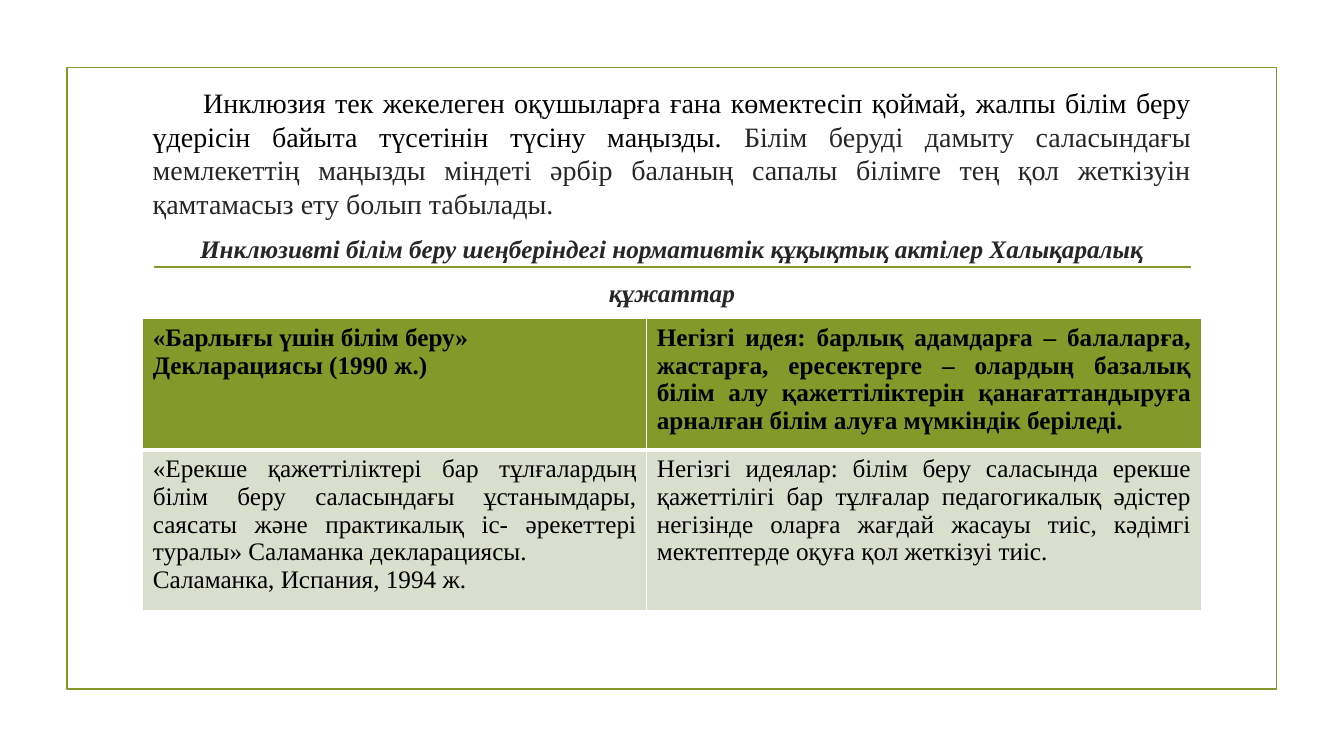
"""Builds the slide on legal acts for inclusive education."""
from lxml import etree
from pptx import Presentation
from pptx.dml.color import RGBColor
from pptx.enum.shapes import MSO_CONNECTOR, MSO_SHAPE
from pptx.enum.text import PP_ALIGN
from pptx.oxml.ns import qn
from pptx.util import Pt

LEFT, CENTER, JUSTIFY = PP_ALIGN.LEFT, PP_ALIGN.CENTER, PP_ALIGN.JUSTIFY
RECTANGLE, STRAIGHT = MSO_SHAPE.RECTANGLE, MSO_CONNECTOR.STRAIGHT
FONT = "Times New Roman"
COLORS = {"olive": "83992A", "pale": "D9DECD", "black": "000000",
          "grey": "262626", "white": "FFFFFF"}


def color(name):
    return RGBColor.from_string(COLORS[name])


def set_font(font, size, shade, bold=False, italic=False):
    font.name, font.size = FONT, Pt(size)
    font.bold, font.italic = bold, italic
    font.color.rgb = color(shade)


deck = Presentation()
deck.slide_width, deck.slide_height = Pt(960), Pt(540)
slide = deck.slides.add_slide(deck.slide_layouts[6])

frame = slide.shapes.add_shape(RECTANGLE, Pt(47.8), Pt(48.2), Pt(864), Pt(444))
frame.shadow.inherit = False
frame.fill.background()

divider = slide.shapes.add_connector(STRAIGHT, Pt(110), Pt(190.8), Pt(850.5), Pt(190.8))
etree.SubElement(divider.element.spPr, qn("a:effectLst"))
for outlined in (frame, divider):
    outlined.line.color.rgb = color("olive")
    outlined.line.width = Pt(1.25)

body = slide.shapes.add_textbox(Pt(102), Pt(57.6), Pt(756), Pt(405)).text_frame
body.word_wrap = True
intro = body.paragraphs[0]
intro.alignment = JUSTIFY
intro.space_after = Pt(6)
intro._p.get_or_add_pPr().set("indent", str(Pt(36)))
intro_parts = [
    ("Инклюзия тек жекелеген оқушыларға ғана көмектесіп қоймай, жалпы білім беру "
     "үдерісін байыта түсетінін түсіну маңызды. ", "black"),
    ("Білім беруді дамыту саласындағы мемлекеттің маңызды міндеті әрбір баланың "
     "сапалы білімге тең қол жеткізуін қамтамасыз ету болып табылады.", "grey"),
]
for text, shade in intro_parts:
    run = intro.add_run()
    run.text = text
    set_font(run.font, 20, shade)

for text in ("Инклюзивті білім беру шеңберіндегі нормативтік құқықтық актілер Халықаралық",
             "құжаттар"):
    heading = body.add_paragraph()
    heading.text = text
    heading.alignment = CENTER
    heading.space_before, heading.space_after = Pt(3.6), Pt(6)
    set_font(heading.font, 18, "grey", bold=True, italic=True)

documents = [
    [[("«Барлығы үшін білім беру» Декларациясы (1990 ж.)", LEFT)],
     [("Негізгі идея: барлық адамдарға – балаларға, жастарға, ересектерге – олардың "
       "базалық білім алу қажеттіліктерін қанағаттандыруға арналған білім алуға "
       "мүмкіндік беріледі.", JUSTIFY)]],
    [[("«Ерекше қажеттіліктері бар тұлғалардың білім беру саласындағы ұстанымдары, "
       "саясаты және практикалық іс- әрекеттері туралы» Саламанка декларациясы.", JUSTIFY),
      ("Саламанка, Испания, 1994 ж.", JUSTIFY)],
     [("Негізгі идеялар: білім беру саласында ерекше қажеттілігі бар тұлғалар "
       "педагогикалық әдістер негізінде оларға жағдай жасауы тиіс, кәдімгі мектептерде "
       "оқуға қол жеткізуі тиіс.", JUSTIFY)]],
]
table = slide.shapes.add_table(2, 2, Pt(102), Pt(227.6), Pt(756), Pt(193)).table
table.columns[0].width, table.columns[1].width = Pt(360), Pt(396)
table.rows[0].height, table.rows[1].height = Pt(86), Pt(107)

row_styles = [
    ("olive", True, {"a:lnL": 1, "a:lnR": 1, "a:lnT": 1, "a:lnB": 3}),
    ("pale", False, {"a:lnL": 1, "a:lnR": 1, "a:lnB": 1}),
]
for row, (cells, (fill, bold, borders)) in enumerate(zip(documents, row_styles)):
    for column, lines in enumerate(cells):
        cell = table.cell(row, column)
        cell.fill.solid()
        cell.fill.fore_color.rgb = color(fill)
        cell_properties = cell._tc.get_or_add_tcPr()
        for position, (side, width) in enumerate(borders.items()):
            border = etree.Element(qn(side), w=str(Pt(width)))
            border_fill = etree.SubElement(border, qn("a:solidFill"))
            etree.SubElement(border_fill, qn("a:srgbClr"), val=COLORS["white"])
            cell_properties.insert(position, border)
        cell.text = "\n".join(text for text, _ in lines)
        for paragraph, (_, alignment) in zip(cell.text_frame.paragraphs, lines):
            paragraph.alignment = alignment
            set_font(paragraph.font, 18, "black", bold=bold)

deck.save("out.pptx")
